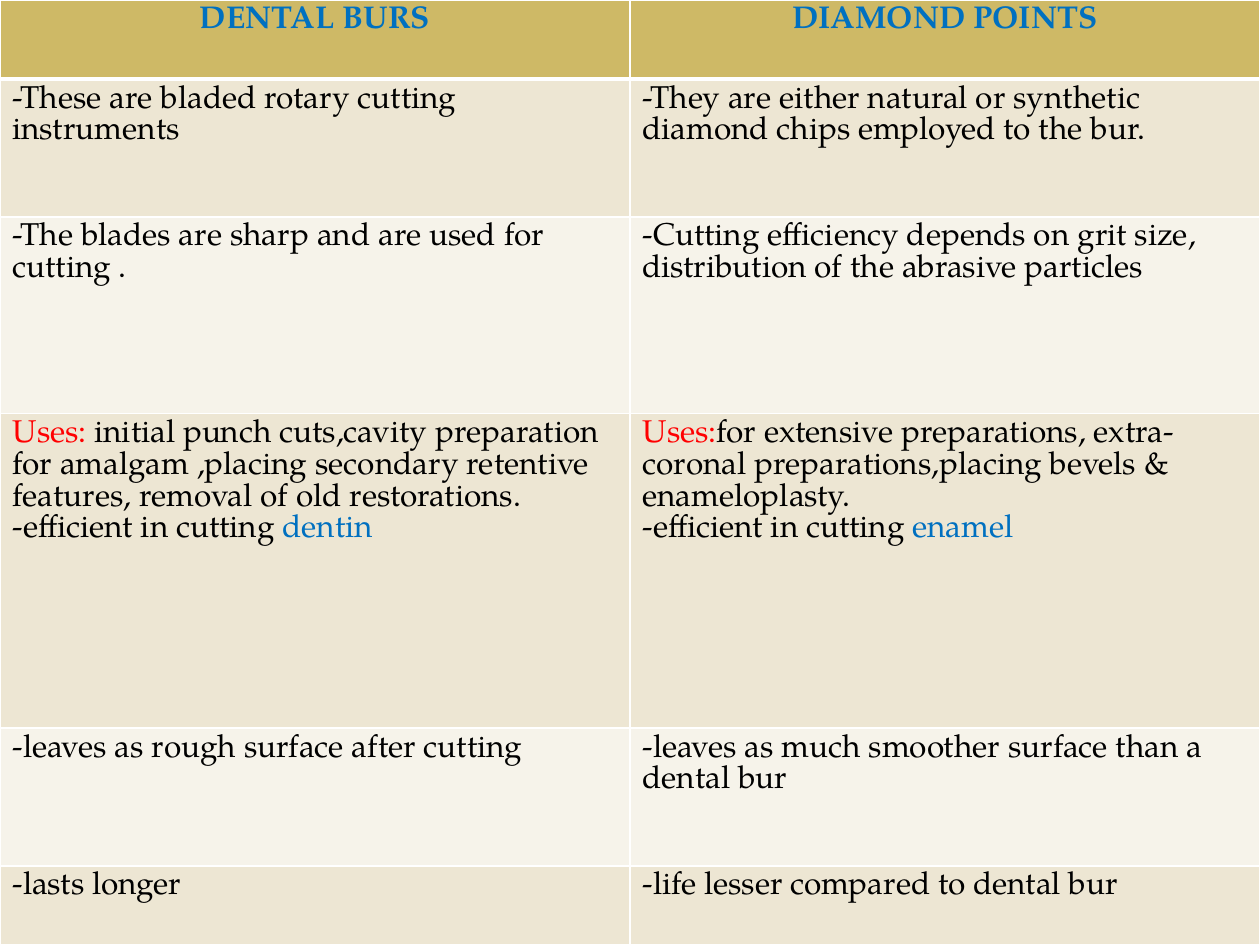
from lxml.etree import SubElement
from pptx import Presentation
from pptx.dml.color import RGBColor
from pptx.enum.text import PP_ALIGN
from pptx.oxml.ns import qn
from pptx.util import Pt

FONT = "TeX Gyre Pagella"
BLACK, BLUE, RED, WHITE = "000000", "0070C0", "FF0000", "FFFFFF"
GOLD, SAND, IVORY = "CEB966", "EDE6D3", "F6F3EA"


def paint(fill, color):
    fill.solid()
    fill.fore_color.rgb = RGBColor.from_string(color)


def add_borders(cell, bottom_width):
    """Put white lines round a cell; they must precede its fill in the XML."""
    properties = cell._tc.get_or_add_tcPr()
    for side in ("L", "R", "T", "B"):
        width = bottom_width if side == "B" else 1
        line = SubElement(properties, qn(f"a:ln{side}"), w=str(Pt(width)))
        SubElement(SubElement(line, qn("a:solidFill")), qn("a:srgbClr"), val=WHITE)


# Each cell is a list of paragraphs, each paragraph a list of (text, colour) runs.
comparison = [
    ([[("DENTAL BURS", BLUE)]],
     [[("DIAMOND POINTS", BLUE)]]),
    ([[("-These are bladed rotary cutting instruments", BLACK)]],
     [[("-They are either natural or synthetic diamond chips employed to the bur.", BLACK)]]),
    ([[("-The blades are sharp and are used for cutting .", BLACK)]],
     [[("-Cutting efficiency depends on grit size, distribution of the abrasive particles", BLACK)]]),
    ([[("Uses: ", RED),
       ("initial punch cuts,cavity preparation for amalgam ,placing secondary "
        "retentive features, removal of old restorations.", BLACK)],
      [("-efficient in cutting ", BLACK), ("dentin", BLUE)]],
     [[("Uses:", RED),
       ("for extensive preparations, extra-coronal preparations,placing bevels "
        "& enameloplasty.", BLACK)],
      [("-efficient in cutting ", BLACK), ("enamel", BLUE)]]),
    ([[("-leaves as rough surface after cutting", BLACK)]],
     [[("-leaves as much smoother surface than a dental bur", BLACK)]]),
    ([[("-lasts longer", BLACK)]],
     [[("-life lesser compared to dental bur", BLACK)]]),
]
row_heights = [45.2, 78.7, 112.5, 179.7, 78.7, 45.2]

prs = Presentation()
prs.slide_width, prs.slide_height = Pt(720), Pt(540)
slide = prs.slides.add_slide(prs.slide_layouts[6])
paint(slide.background.fill, GOLD)

table = slide.shapes.add_table(len(comparison), 2, Pt(0), Pt(0), Pt(720), Pt(540)).table
for column in table.columns:
    column.width = Pt(360)

for row_index, (contents, height) in enumerate(zip(comparison, row_heights)):
    is_header = row_index == 0
    table.rows[row_index].height = Pt(height)
    band = GOLD if is_header else SAND if row_index % 2 else IVORY
    for column_index, paragraphs in enumerate(contents):
        cell = table.cell(row_index, column_index)
        add_borders(cell, 3 if is_header else 1)
        paint(cell.fill, band)
        frame = cell.text_frame
        for number, runs in enumerate(paragraphs):
            paragraph = frame.add_paragraph() if number else frame.paragraphs[0]
            paragraph.alignment = PP_ALIGN.CENTER if is_header else PP_ALIGN.LEFT
            for text, color in runs:
                run = paragraph.add_run()
                run.text = text
                run.font.name = FONT
                run.font.size = Pt(18)
                run.font.bold = is_header
                run.font.color.rgb = RGBColor.from_string(color)

prs.save("out.pptx")
